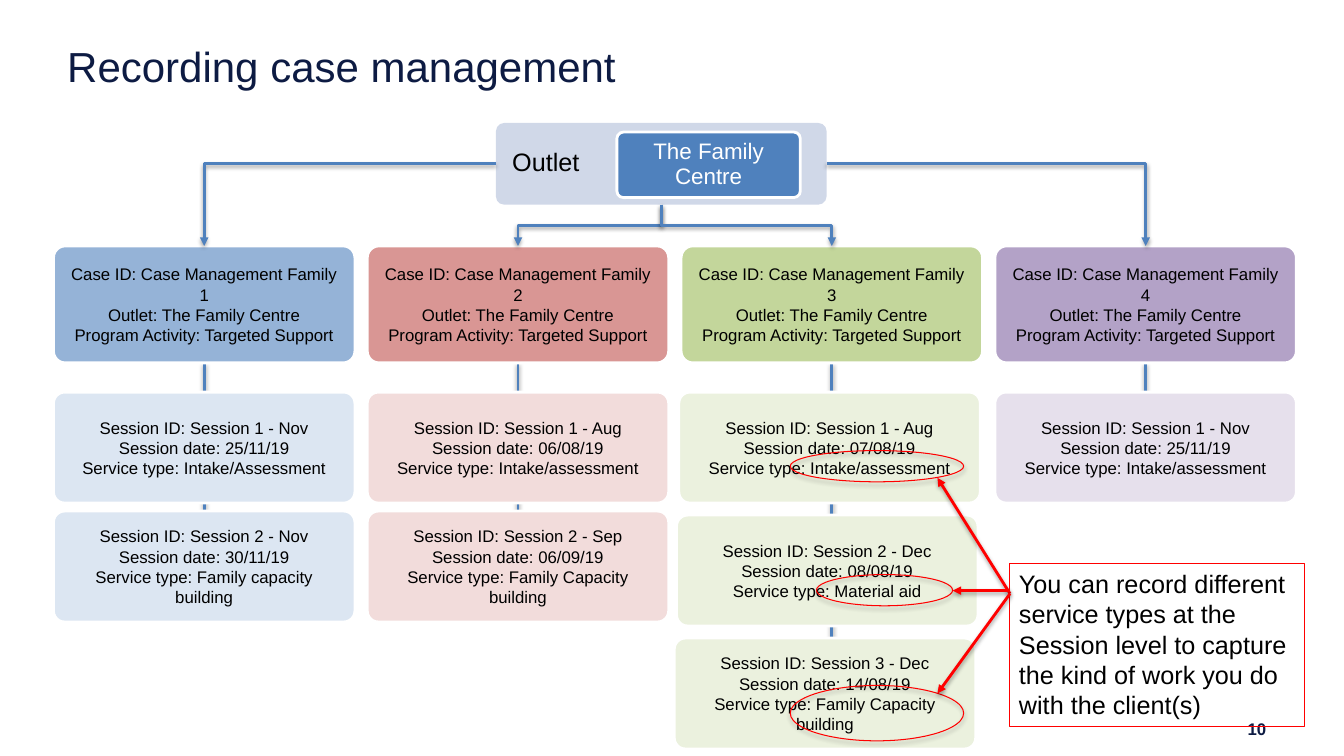
from dataclasses import dataclass

from lxml import etree
from pptx import Presentation
from pptx import util as u
from pptx.dml.color import RGBColor
from pptx.enum import shapes, text
from pptx.oxml import ns, parse_xml


@dataclass(frozen=True)
class Theme:
    font: str = "Arial"
    navy: str = "0D1B43"
    black: str = "000000"
    white: str = "FFFFFF"
    blue: str = "4F81BD"
    pale: str = "D0D8E8"
    red: str = "FF0000"
    title: int = 30
    large: int = 18
    medium: int = 16
    small: int = 12
    thick: float = 2
    thin: float = 0.75


THEME = Theme()
WIDTH, HEIGHT = u.Inches(13.33), u.Inches(7.5)
FIRST_COLUMN, COLUMN_STEP, CARD_WIDTH = 3.98, 23.35, 22.43
CASE_TOP, CASE_HEIGHT, SESSION_HEIGHT = 32.53, 15.47, 14.67
PANEL = (36.9, 16.27, 24.6, 10.8)
SHAPE = shapes.MSO_SHAPE
ALIGN = text.PP_ALIGN
ANCHOR = text.MSO_ANCHOR

FAMILIES = [
    ("95B3D7", "DCE6F2", 0, [
        (51.87, ["Session ID: Session 1 - Nov Session date: 25/11/19", "Service type: Intake/Assessment"]),
        (67.6, ["Session ID: Session 2 - Nov", "Session date: 30/11/19",
                "Service type: Family capacity building"]),
    ]),
    ("D99694", "F2DCDB", 0, [
        (51.87, ["Session ID: Session 1 - Aug Session date: 06/08/19", "Service type: Intake/assessment"]),
        (67.6, ["Session ID: Session 2 - Sep Session date: 06/09/19",
                "Service type: Family Capacity building"]),
    ]),
    ("C3D69B", "EBF1DE", -0.17, [
        (51.87, ["Session ID: Session 1 - Aug Session date: 07/08/19", "Service type: Intake/assessment"]),
        (68.13, ["Session ID: Session 2 - Dec Session date: 08/08/19", "Service type: Material aid"]),
        (84.4, ["Session ID: Session 3 - Dec Session date: 14/08/19",
                "Service type: Family Capacity building"]),
    ]),
    ("B3A2C7", "E6E0EC", 0, [
        (51.87, ["Session ID: Session 1 - Nov Session date: 25/11/19", "Service type: Intake/assessment"]),
    ]),
]


def across(share):
    return int(WIDTH * share / 100)


def down(share):
    return int(HEIGHT * share / 100)


def place(area):
    left, top, width, height = area
    return across(left), down(top), across(width), down(height)


def column_left(column):
    return FIRST_COLUMN + column * COLUMN_STEP


def column_middle(column):
    return column_left(column) + CARD_WIDTH / 2


def apply(target, values):
    for name, value in values.items():
        setattr(target, name, value)


def write(box, lines, size, color=THEME.black, bold=False, align=ALIGN.CENTER,
          anchor=ANCHOR.MIDDLE, inset=(0.1, 0.05), spacing=None):
    frame = box.text_frame
    side, edge = map(u.Inches, inset)
    apply(frame, dict(word_wrap=True, auto_size=text.MSO_AUTO_SIZE.NONE, vertical_anchor=anchor,
                      margin_left=side, margin_right=side, margin_top=edge, margin_bottom=edge))
    for index, line in enumerate(lines):
        para = frame.add_paragraph() if index else frame.paragraphs[0]
        apply(para, dict(alignment=align, line_spacing=spacing))
        span = para.add_run()
        span.text = line
        apply(span.font, dict(name=THEME.font, size=u.Pt(size), bold=bold))
        span.font.color.rgb = RGBColor.from_string(color)


def stroke(item, color, width):
    item.line.color.rgb = RGBColor.from_string(color)
    item.line.width = u.Pt(width)


def cast_shadow(item, opacity, distance):
    item._element.spPr.append(parse_xml(
        f'<a:effectLst {ns.nsdecls("a")}><a:outerShdw blurRad="40000" dist="{distance}" '
        f'dir="5400000" rotWithShape="0"><a:srgbClr val="{THEME.black}">'
        f'<a:alpha val="{opacity}000"/></a:srgbClr></a:outerShdw></a:effectLst>'))


def add_panel(page, area, fill=None, border=None, width=THEME.thick, kind=SHAPE.ROUNDED_RECTANGLE):
    panel = page.shapes.add_shape(kind, *place(area))
    if kind == SHAPE.ROUNDED_RECTANGLE:
        panel.adjustments[0] = 0.1
    if fill:
        panel.fill.solid()
        panel.fill.fore_color.rgb = RGBColor.from_string(fill)
    else:
        panel.fill.background()
    if border:
        stroke(panel, border, width)
    else:
        panel.line.fill.background()
    if kind == SHAPE.OVAL:
        cast_shadow(panel, 35, 23000)
    else:
        panel.shadow.inherit = False
    return panel


def add_label(page, area, words, size, **look):
    write(page.shapes.add_textbox(*place(area)), [words], size, **look)


def add_card(page, area, fill, lines):
    write(add_panel(page, area, fill, THEME.white), lines, THEME.small, inset=(0.13, 0.1))


def add_link(page, start, end, color=THEME.blue, arrow=True, kind=shapes.MSO_CONNECTOR.STRAIGHT):
    link = page.shapes.add_connector(kind, across(start[0]), down(start[1]), across(end[0]), down(end[1]))
    stroke(link, color, THEME.thick)
    if arrow:
        etree.SubElement(link.line._get_or_add_ln(), ns.qn("a:tailEnd"), type="triangle")
    cast_shadow(link, 38, 20000)
    return link


def add_corner(page, start, end):
    link = add_link(page, start, end, kind=shapes.MSO_CONNECTOR.ELBOW)
    link._element.spPr.find(ns.qn("a:prstGeom")).set("prst", "bentConnector2")


def add_branch(page, start, end):
    ratio = WIDTH / HEIGHT
    middle_x, middle_y = (start[0] + end[0]) / 2, (start[1] + end[1]) / 2
    rise, run = (start[1] - middle_y) / ratio, (start[0] - middle_x) * ratio
    link = add_link(page, (middle_x + rise, middle_y - run), (middle_x - rise, middle_y + run),
                    kind=shapes.MSO_CONNECTOR.ELBOW)
    link._element.spPr.find(ns.qn("a:xfrm")).set("rot", "5400000")


def add_title(page, words):
    title = page.shapes.title
    apply(title, dict(zip(("left", "top", "width", "height"), place((5, 5.33, 90, 8.8)))))
    write(title, [words], THEME.title, color=THEME.navy, align=ALIGN.LEFT,
          anchor=ANCHOR.TOP, inset=(0, 0))


def add_outlet(page):
    left, top, width, height = PANEL
    add_panel(page, PANEL, THEME.pale)
    add_label(page, (left, top, 7.43, height), "Outlet", THEME.large, spacing=0.9)
    centre = add_panel(page, (45.9, 17.47, 13.65, 8.67), THEME.blue, THEME.white)
    write(centre, ["The Family Centre"], THEME.medium, color=THEME.white, spacing=0.9)


def add_families(page):
    for column, family in enumerate(FAMILIES):
        middle = column_middle(column)
        add_link(page, (middle, CASE_TOP + CASE_HEIGHT), (middle, family[3][-1][0] + 1), arrow=False)
    for column, (strong, light, drift, sessions) in enumerate(FAMILIES):
        left = column_left(column)
        add_card(page, (left, CASE_TOP, CARD_WIDTH, CASE_HEIGHT), strong,
                 [f"Case ID: Case Management Family {column + 1}",
                  "Outlet: The Family Centre", "Program Activity: Targeted Support"])
        for row, (top, lines) in enumerate(sessions, 1):
            add_card(page, (left + row * drift, top, CARD_WIDTH, SESSION_HEIGHT), light, lines)


def add_outlet_links(page):
    left, top, width, height = PANEL
    level, bottom = top + height / 2, (left + width / 2, top + height)
    add_corner(page, (left, level), (column_middle(0), CASE_TOP))
    add_corner(page, (left + width, level), (column_middle(3), CASE_TOP))
    for column in (1, 2):
        add_branch(page, bottom, (column_middle(column), CASE_TOP))


def add_callout(page):
    for area in ((58.8, 59.6, 12.9, 4.13), (60.75, 76, 10.13, 4.13), (58.8, 90.67, 12.9, 7.33)):
        add_panel(page, area, border=THEME.red, width=THEME.thin, kind=SHAPE.OVAL)
    note = add_panel(page, (75.08, 74.53, 21.98, 21.6), border=THEME.red,
                     width=THEME.thin, kind=SHAPE.RECTANGLE)
    write(note, ["You can record different service types at the Session level to capture "
                 "the kind of work you do with the client(s)"],
          THEME.large, align=ALIGN.LEFT, anchor=ANCHOR.TOP)
    for level, end in ((78.53, (69.75, 63.2)), (78.13, (70.88, 78.13)), (78.53, (69.75, 91.73))):
        add_link(page, (75.15, level), end, THEME.red)


def main():
    deck = Presentation()
    apply(deck, dict(slide_width=WIDTH, slide_height=HEIGHT))
    page = deck.slides.add_slide(deck.slide_layouts[5])
    add_title(page, "Recording case management")
    add_label(page, (86.78, 94.93, 8.18, 3.07), "10", THEME.small, color=THEME.navy,
              bold=True, align=ALIGN.RIGHT)
    add_families(page)
    add_outlet(page)
    add_outlet_links(page)
    add_callout(page)
    deck.save("out.pptx")


if __name__ == "__main__":
    main()
